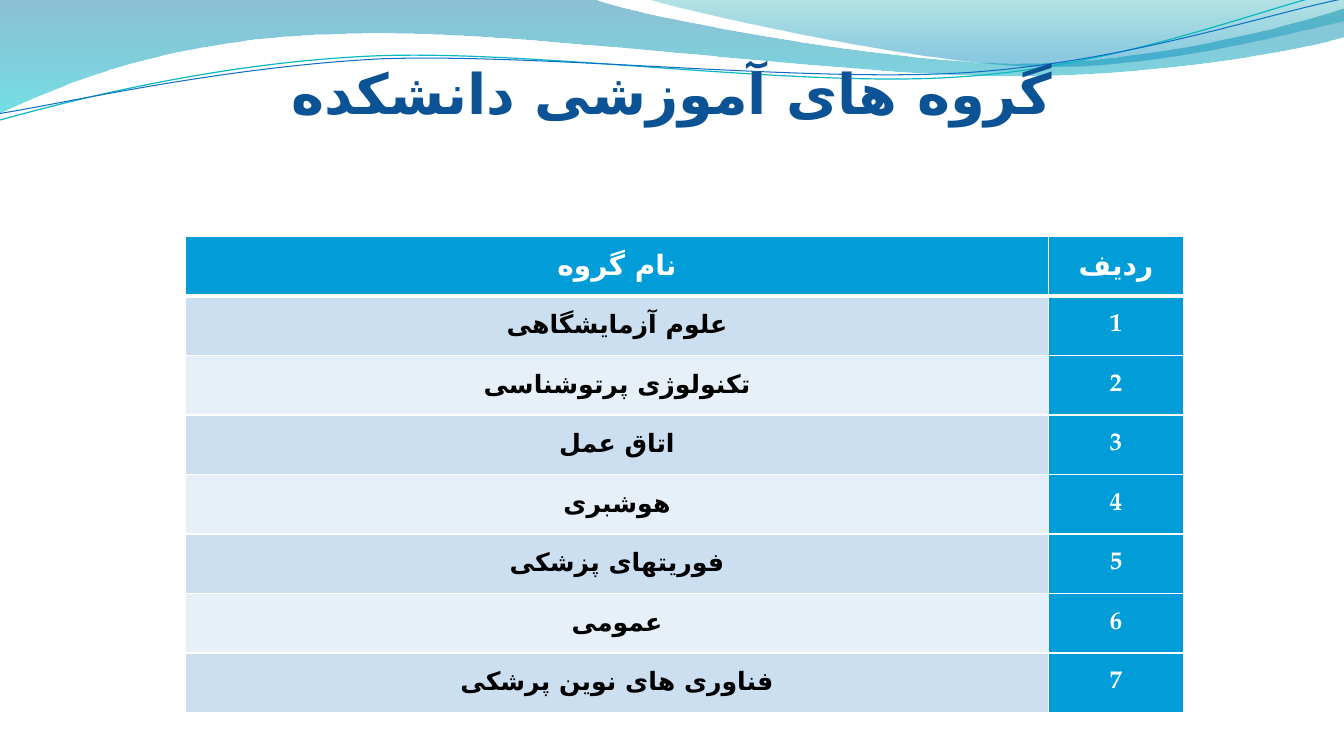
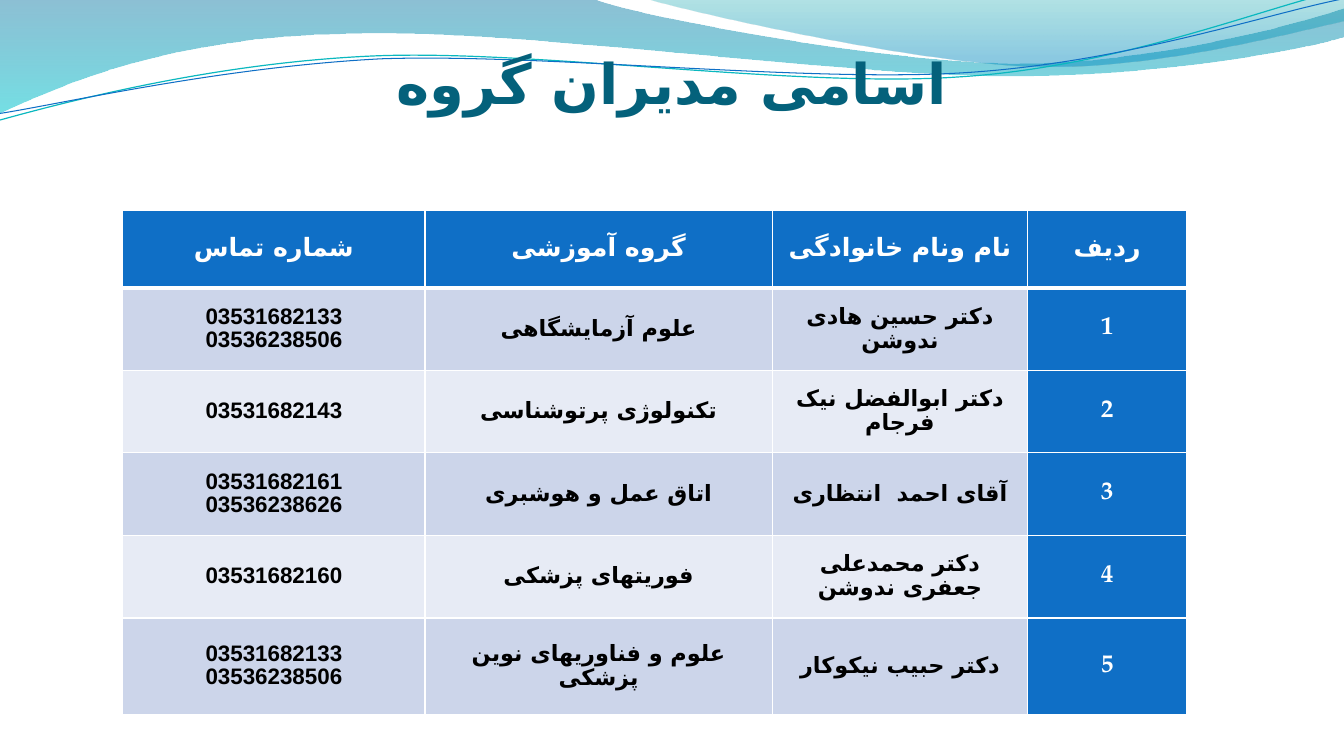
from lxml.etree import SubElement
from pptx import Presentation
from pptx.dml.color import RGBColor
from pptx.enum.text import MSO_ANCHOR as ANCHOR, PP_ALIGN as ALIGN
from pptx.oxml.ns import qn
from pptx.util import Pt

LATIN, HEAD_FONT = "Calibri", "TeX Gyre Pagella"
ARABIC, DIGITS = "DejaVu Sans", "Arial"  # complex-script fonts
WHITE, BLACK = "FFFFFF", "000000"


def rgb(value):
    return RGBColor.from_string(value)


def write(tf, text, size=18, font=LATIN, color=BLACK, rtl=False, spacing=None):
    for i, line in enumerate(text.split("\n")):
        p = tf.paragraphs[0] if i == 0 else tf.add_paragraph()
        p.alignment = ALIGN.CENTER
        if rtl:
            p._p.get_or_add_pPr().set("rtl", "1")
        if spacing:
            p.line_spacing = spacing
        r = p.add_run()
        r.text = line
        r.font.size, r.font.bold, r.font.name = Pt(size), True, font
        r.font.color.rgb = rgb(color)
        complex_font = DIGITS if line.isdigit() else ARABIC
        SubElement(r._r.get_or_add_rPr(), qn("a:cs")).set("typeface", complex_font)


# Waves: pairs are straight moves, sixes are Bezier curves, in points
WAVES = [
    dict(segs=[(0, 0), (423, -1), (456, 12, 637, 45, 728, 45),
               (820, 45, 920, 19, 960, 6), (961, 26),
               (944, 32, 835, 55, 716, 54), (597, 54, 366, 20, 247, 24),
               (123, 26, 44, 60, -1, 81)],
         stops=[(0, "0074A1", 45), (1, "00C6CF", 55)]),
    dict(segs=[(460, -1), (489, 8, 654, 45, 738, 47),
               (822, 50, 923, 23, 960, 15), (960, 0)],
         stops=[(0, "00A1A9", 30), (0.8, "008BBF", 45)]),
    dict(segs=[(-1, 86), (46, 73, 152, 45, 266, 40),
               (379, 35, 569, 63, 684, 55), (799, 48, 901, 6, 958, -7)],
         line=("0AB8BF", 0.85)),
    dict(segs=[(0, 81), (45, 74, 157, 48, 272, 42),
               (387, 38, 573, 59, 688, 52), (803, 45, 904, 10, 960, -1)],
         line=("0F6FC6", 0.75)),
]

# Slide contents
SLIDES = [
    dict(title="گروه های آموزشی دانشکده", title_color="0B5394", title_height=68,
         left=132.5, top=169, cols=[616.4, 96.4], rows=[42.5] * 8,
         accent="009DD9", bands=("CCDFF1", "E7EFF8"), head_size=20, body_size=18,
         cells=[["نام گروه", "ردیف"],
                ["علوم آزمایشگاهی", "1"],
                ["تکنولوژی پرتوشناسی", "2"],
                ["اتاق عمل", "3"],
                ["هوشبری", "4"],
                ["فوریتهای پزشکی", "5"],
                ["عمومی", "6"],
                ["فناوری های نوین پرشکی", "7"]]),
    dict(title="اسامی مدیران گروه", title_color="04617B", title_height=61,
         left=87.6, top=150, cols=[216, 248, 182.6, 113.4], rows=[55.5] + [59] * 4 + [69],
         accent="0F6FC6", bands=("CCD5EA", "E7EBF5"), head_size=18, body_size=16,
         cells=[["شماره تماس", "گروه آموزشی", "نام ونام خانوادگی", "ردیف"],
                ["03531682133\n03536238506", "علوم آزمایشگاهی", "دکتر حسین هادی ندوشن", "1"],
                ["03531682143", "تکنولوژی پرتوشناسی", "دکتر ابوالفضل نیک فرجام", "2"],
                ["03531682161\n03536238626", "اتاق عمل و هوشبری", "آقای احمد  انتظاری", "3"],
                ["03531682160", "فوریتهای پزشکی", "دکتر محمدعلی جعفری ندوشن", "4"],
                ["03531682133\n03536238506", "علوم و فناوریهای نوین پزشکی",
                 "دکتر حبیب نیکوکار", "5"]]),
]

prs = Presentation()
prs.slide_width, prs.slide_height = Pt(960), Pt(540)

for data in SLIDES:
    s = prs.slides.add_slide(prs.slide_layouts[6])

    # Wave band
    for wave in WAVES:
        segs = wave["segs"]
        pts = [(Pt(x), Pt(y)) for seg in segs for x, y in zip(seg[::2], seg[1::2])]
        fb = s.shapes.build_freeform(*pts[0])
        fb.add_line_segments(pts[1:], close="stops" in wave)
        sp = fb.convert_to_shape()
        # Join each three control points into one curve
        lines = iter(list(sp._element.iter(qn("a:lnTo"))))
        for seg in segs[1:]:
            first, *rest = [next(lines) for _ in seg[::2]]
            if rest:
                first.tag = qn("a:cubicBezTo")
            for ln in rest:
                first.append(ln[0])
                ln.getparent().remove(ln)
        sp.shadow.inherit = False
        if "stops" in wave:
            sp.line.fill.background()
            sp.fill.gradient()
            sp.fill.gradient_angle = 270
            for stop, (pos, color, _) in zip(sp.fill.gradient_stops, wave["stops"]):
                stop.position, stop.color.rgb = pos, rgb(color)
            colors = sp._element.spPr.iter(qn("a:srgbClr"))
            for clr, (_, _, opacity) in zip(colors, wave["stops"]):
                SubElement(clr, qn("a:alpha")).set("val", str(opacity * 1000))
        else:
            color, width = wave["line"]
            sp.fill.background()
            sp.line.color.rgb, sp.line.width = rgb(color), Pt(width)

    # Title
    tf = s.shapes.add_textbox(Pt(48), Pt(21.6), Pt(864), Pt(data["title_height"])).text_frame
    tf.word_wrap, tf.vertical_anchor = True, ANCHOR.BOTTOM
    tf.margin_left = tf.margin_right = tf.margin_bottom = 0
    write(tf, data["title"], size=40, color=data["title_color"])

    # Table
    cols, rows = data["cols"], data["rows"]
    tbl = s.shapes.add_table(len(rows), len(cols), Pt(data["left"]), Pt(data["top"]),
                             Pt(sum(cols)), Pt(sum(rows))).table
    for col, width in zip(tbl.columns, cols):
        col.width = Pt(width)
    for i, (row, height) in enumerate(zip(tbl.rows, rows)):
        row.height = Pt(height)
        for j, text in enumerate(data["cells"][i]):
            cell = tbl.cell(i, j)
            cell.vertical_anchor = ANCHOR.MIDDLE
            # White borders, thick under the header
            tcPr = cell._tc.get_or_add_tcPr()
            for side in "LRTB":
                thick = (i, side) in [(0, "B"), (1, "T")]
                ln = SubElement(tcPr, qn("a:ln" + side), w=str(Pt(3 if thick else 1)))
                SubElement(SubElement(ln, qn("a:solidFill")), qn("a:srgbClr"), val=WHITE)
            accent = i == 0 or j == len(cols) - 1
            cell.fill.solid()
            cell.fill.fore_color.rgb = rgb(data["accent"] if accent else data["bands"][(i - 1) % 2])
            if accent:
                size, spacing = (data["head_size"], 0.9) if i == 0 else (18, None)
                write(cell.text_frame, text, size=size, font=HEAD_FONT, color=WHITE,
                      spacing=spacing)
            else:
                cell.margin_left = cell.margin_right = Pt(5)
                cell.margin_top = cell.margin_bottom = 0
                write(cell.text_frame, text, size=data["body_size"], rtl=True, spacing=0.93)

prs.save("out.pptx")
